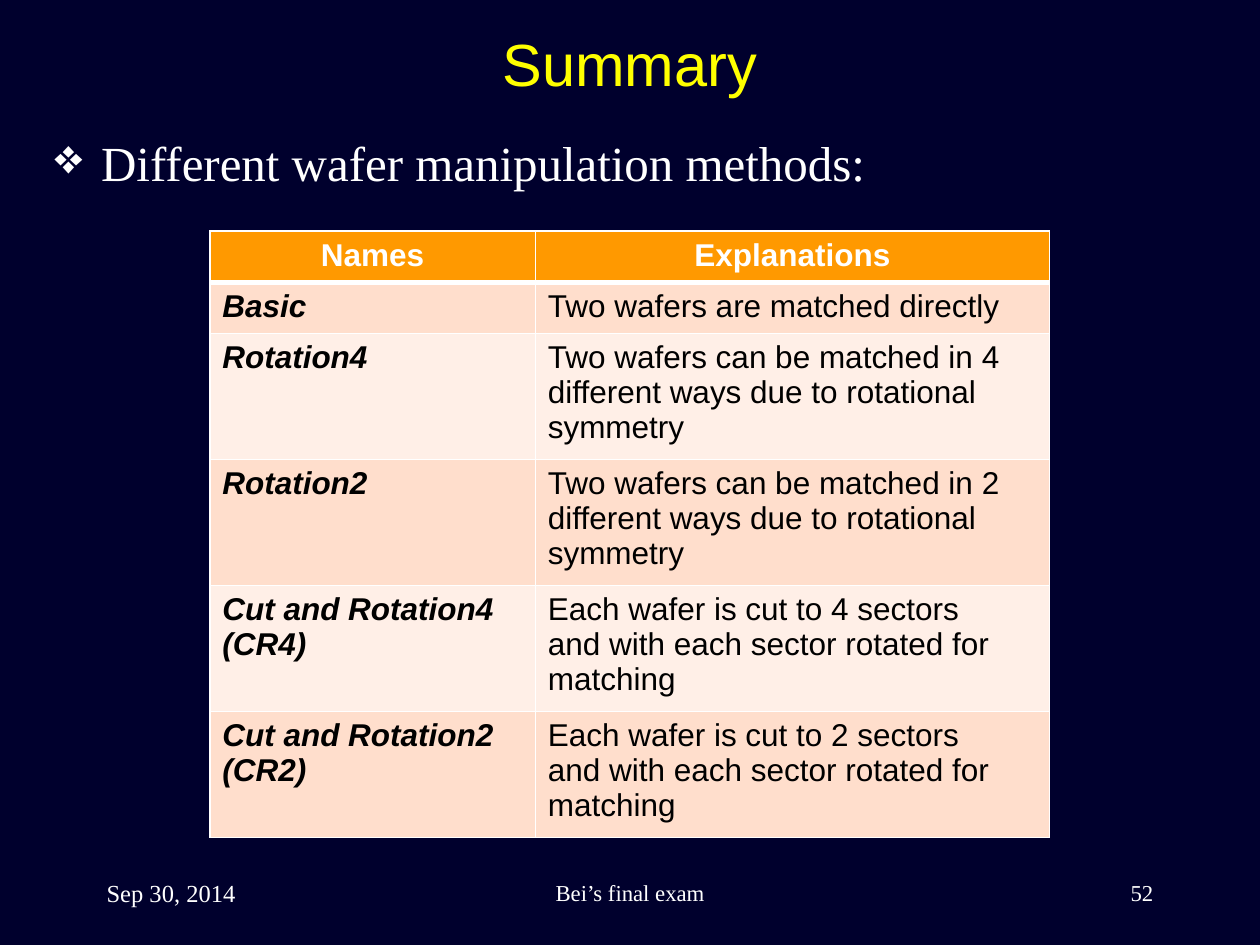
from pptx import Presentation
from pptx.dml.color import RGBColor
from pptx.enum import text
from pptx.oxml import parse_xml
from pptx.oxml.ns import nsdecls
from pptx.util import Cm, Pt

SERIF, SANS = "Times New Roman", "Arial"
WHITE, BLACK, YELLOW, NAVY = "FFFFFF", "000000", "FFFF00", "00002D"
ORANGE, BANDS = "FF9900", ("FFDECC", "FFEFE7")
LEFT, CENTER, RIGHT = text.PP_ALIGN.LEFT, text.PP_ALIGN.CENTER, text.PP_ALIGN.RIGHT

METHODS = [
    ("Names", "Explanations"),
    ("Basic", "Two wafers are matched directly"),
    ("Rotation4", "Two wafers can be matched in 4\n"
                  "different ways due to rotational symmetry"),
    ("Rotation2", "Two wafers can be matched in 2\n"
                  "different ways due to rotational symmetry"),
    ("Cut and Rotation4 (CR4)", "Each wafer is cut to 4 sectors\n"
                                "and with each sector rotated for matching"),
    ("Cut and Rotation2 (CR2)", "Each wafer is cut to 2 sectors\n"
                                "and with each sector rotated for matching"),
]


def paint(fill, color):
    fill.solid()
    fill.fore_color.rgb = RGBColor.from_string(color)


def write(frame, words, font, size, color, align=LEFT, bold=False, italic=False):
    frame.text = words
    for para in frame.paragraphs:
        para.alignment = align
        para.font.name, para.font.size = font, Pt(size)
        para.font.bold, para.font.italic = bold, italic
        para.font.color.rgb = RGBColor.from_string(color)


def add_title(page, left, top, width, height):
    title = page.shapes.title
    title.left, title.top, title.width, title.height = left, top, width, height
    title.text_frame.vertical_anchor = text.MSO_ANCHOR.TOP
    write(title.text_frame, "Summary", SANS, 34, YELLOW, CENTER)


def add_bullet(page, left, top, width, height):
    frame = page.shapes.add_textbox(left, top, width, height).text_frame
    frame.word_wrap = True
    write(frame, "Different wafer manipulation methods:", SERIF, 28, WHITE)
    para = frame.paragraphs[0]
    para.space_before = Pt(4)
    # Hanging bullet
    indent = Cm(0.94)
    props = para._p.get_or_add_pPr()
    props.set("marL", str(indent))
    props.set("indent", str(-indent))
    bullet = parse_xml(f'<a:buChar {nsdecls("a")} char="❖"/>')
    props.insert_element_before(bullet, "a:tabLst", "a:defRPr", "a:extLst")


def add_borders(cell, widths):
    props = cell._tc.get_or_add_tcPr()
    for side, width in widths.items():
        props.append(parse_xml(
            f'<a:ln{side} {nsdecls("a")} w="{Pt(width)}"><a:solidFill>'
            f'<a:srgbClr val="{WHITE}"/></a:solidFill></a:ln{side}>'))


def add_methods(page, left, top, width, height):
    table = page.shapes.add_table(len(METHODS), 2, left, top, width, height).table
    table.columns[0].width = Cm(6.56)
    table.columns[1].width = width - Cm(6.56)
    short = Cm(1.03)
    tall = (height - 2 * short) // (len(METHODS) - 2)
    for i, row in enumerate(METHODS):
        header = i == 0
        table.rows[i].height = short if i < 2 else tall
        for j, words in enumerate(row):
            cell = table.cell(i, j)
            # A thicker rule parts the header from the body
            add_borders(cell, {"L": 1, "R": 1, "T": 3 if i == 1 else 1,
                               "B": 3 if header else 1})
            paint(cell.fill, ORANGE if header else BANDS[(i - 1) % 2])
            write(cell.text_frame, words, SANS, 18, WHITE if header else BLACK,
                  CENTER if header else LEFT, bold=header or j == 0,
                  italic=not header and j == 0)


def add_footer(page, left, top, width, height):
    side, middle = Cm(5.29), Cm(8.04)
    parts = [
        ("Sep 30, 2014", left, side, 14, LEFT),
        ("Bei’s final exam", left + (width - middle) // 2, middle, 13, CENTER),
        ("52", left + width - side, side, 13, RIGHT),
    ]
    for words, x, part_width, size, align in parts:
        frame = page.shapes.add_textbox(x, top, part_width, height).text_frame
        frame.word_wrap = True
        frame.vertical_anchor = text.MSO_ANCHOR.MIDDLE
        write(frame, words, SERIF, size, WHITE, align)


def main():
    deck = Presentation()
    deck.slide_width, deck.slide_height = Cm(25.4), Cm(19.05)
    page = deck.slides.add_slide(deck.slide_layouts[5])
    paint(page.background.fill, NAVY)
    add_title(page, Cm(1.27), Cm(0.42), Cm(22.86), Cm(3.18))
    add_bullet(page, Cm(0.85), Cm(2.54), Cm(23.7), Cm(12.7))
    add_methods(page, Cm(4.23), Cm(4.66), Cm(16.93), Cm(11.6))
    add_footer(page, Cm(1.9), Cm(17.36), Cm(21.6), Cm(1.27))
    deck.save("out.pptx")


if __name__ == "__main__":
    main()
